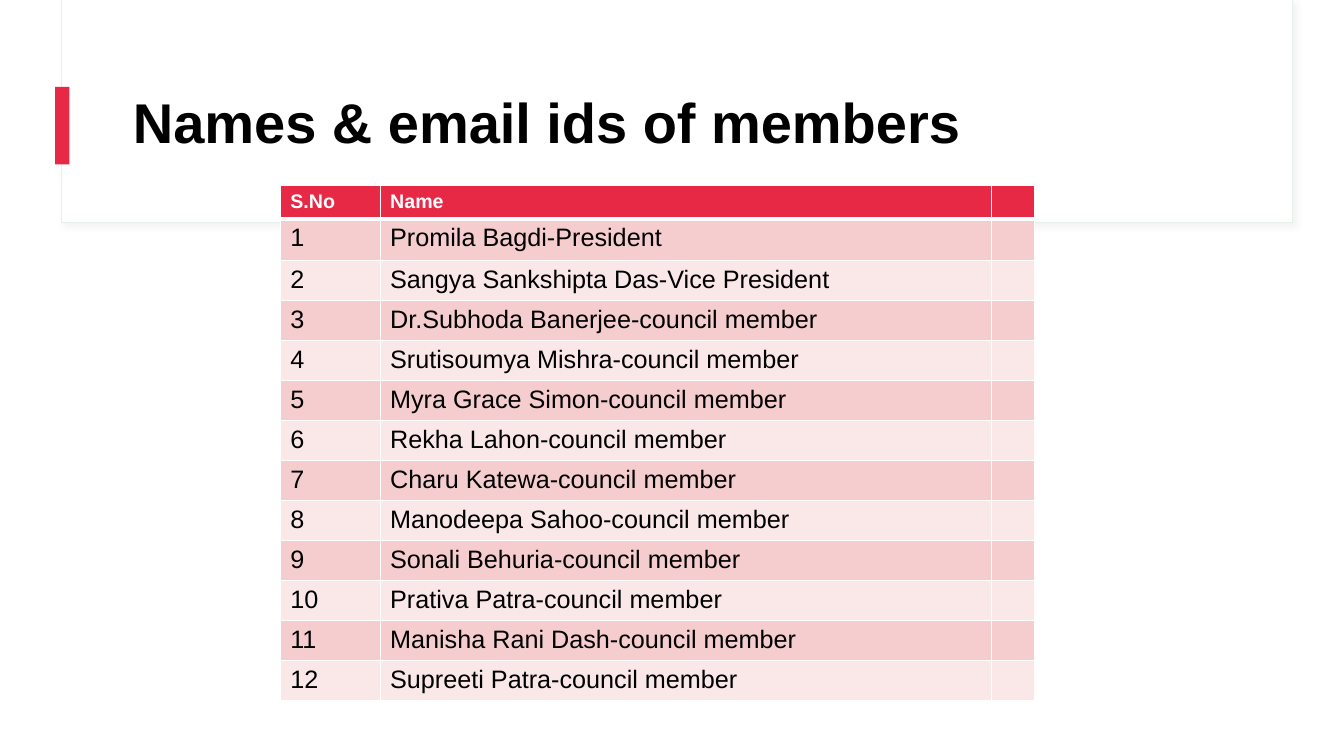
from lxml.etree import SubElement
from pptx import Presentation
from pptx.dml.color import RGBColor
from pptx.enum.shapes import MSO_SHAPE as Shape
from pptx.enum.text import MSO_ANCHOR as Anchor
from pptx.oxml.ns import qn
from pptx.util import Pt

WHITE = RGBColor(0xFF, 0xFF, 0xFF)
BLACK = RGBColor(0, 0, 0)
RED = RGBColor(0xE7, 0x29, 0x46)
PINK = RGBColor(0xF6, 0xCD, 0xCF)
PALE_PINK = RGBColor(0xFA, 0xE8, 0xE9)
PALE_GREEN = RGBColor(0xE4, 0xF0, 0xE8)
SHADOW_GREY = RGBColor(0xD9, 0xD9, 0xD9)
FONT = "Arial"

MEMBERS = [
    "Promila Bagdi-President",
    "Sangya Sankshipta Das-Vice President",
    "Dr.Subhoda Banerjee-council member",
    "Srutisoumya Mishra-council member",
    "Myra Grace Simon-council member",
    "Rekha Lahon-council member",
    "Charu Katewa-council member",
    "Manodeepa Sahoo-council member",
    "Sonali Behuria-council member",
    "Prativa Patra-council member",
    "Manisha Rani Dash-council member",
    "Supreeti Patra-council member",
]
COLUMN_WIDTHS = [71.3, 437, 30.2]
HEADER_HEIGHT, FIRST_HEIGHT, ROW_HEIGHT = 23.6, 29.5, 27.38


def add_rectangle(slide, left, top, width, height, fill, line=None):
    """Add a flat rectangle with an optional thin outline."""
    shape = slide.shapes.add_shape(Shape.RECTANGLE, Pt(left), Pt(top), Pt(width), Pt(height))
    shape.shadow.inherit = False
    shape.fill.solid()
    shape.fill.fore_color.rgb = fill
    if line is None:
        shape.line.fill.background()
    else:
        shape.line.color.rgb = line
        shape.line.width = Pt(0.75)
    return shape


def add_soft_shadow(shape):
    """Give a shape a faint shadow towards the lower right."""
    effects = shape._element.spPr.find(qn("a:effectLst"))
    shadow = SubElement(effects, qn("a:outerShdw"), blurRad=str(Pt(4)), dist=str(Pt(3)), dir="2700000")
    color = SubElement(shadow, qn("a:srgbClr"), val=str(SHADOW_GREY))
    SubElement(color, qn("a:alpha"), val="30000")


def format_font(font, size, color, bold):
    """Set the typeface, size, colour and weight of a font."""
    font.name = FONT
    font.size = Pt(size)
    font.color.rgb = color
    font.bold = bold


def place_title(slide, text):
    """Fill the title placeholder and bring it in front of the panel."""
    title = slide.shapes.title
    title.left, title.top, title.width, title.height = Pt(87.8), Pt(43.2), Pt(800.6), Pt(92.9)
    frame = title.text_frame
    frame.text = text
    frame.word_wrap = True
    frame.vertical_anchor = Anchor.MIDDLE
    paragraph = frame.paragraphs[0]
    paragraph.alignment = 1
    paragraph.line_spacing = 0.9
    format_font(paragraph.runs[0].font, 40, BLACK, True)
    slide.shapes._spTree.append(title._element)


def set_borders(cell, top, bottom):
    """Draw white borders round a cell, with the given top and bottom widths."""
    properties = cell._tc.get_or_add_tcPr()
    for side, width in (("L", 1), ("R", 1), ("T", top), ("B", bottom)):
        line = SubElement(properties, qn(f"a:ln{side}"), w=str(Pt(width)))
        SubElement(SubElement(line, qn("a:solidFill")), qn("a:srgbClr"), val=str(WHITE))


def format_cell(cell, text, row):
    """Write one table cell and style it according to its row."""
    header = row == 0
    size = 14 if header else 18
    set_borders(cell, 3 if row == 1 else 1, 3 if header else 1)
    cell.fill.solid()
    cell.fill.fore_color.rgb = RED if header else PINK if row % 2 else PALE_PINK
    cell.margin_top, cell.margin_bottom = Pt(3.6), Pt(3)
    cell.text_frame.text = text
    paragraph = cell.text_frame.paragraphs[0]
    for run in paragraph.runs:
        format_font(run.font, size, WHITE if header else BLACK, header)
    if not text:
        SubElement(paragraph._p, qn("a:endParaRPr"), sz=str(size * 100))


def add_member_table(slide):
    """Add the numbered table of members."""
    rows = [("S.No", "Name", "")]
    rows += [(str(number), name, "") for number, name in enumerate(MEMBERS, 1)]
    heights = [HEADER_HEIGHT, FIRST_HEIGHT] + [ROW_HEIGHT] * (len(rows) - 2)
    table = slide.shapes.add_table(
        len(rows), len(COLUMN_WIDTHS), Pt(200.2), Pt(132.7), Pt(sum(COLUMN_WIDTHS)), Pt(sum(heights))
    ).table
    for column, width in zip(table.columns, COLUMN_WIDTHS):
        column.width = Pt(width)
    for index, (values, height) in enumerate(zip(rows, heights)):
        table.rows[index].height = Pt(height)
        for column, text in enumerate(values):
            format_cell(table.cell(index, column), text, index)


def main():
    """Build the members slide and save it."""
    presentation = Presentation()
    presentation.slide_width, presentation.slide_height = Pt(960), Pt(540)
    slide = presentation.slides.add_slide(presentation.slide_layouts[5])
    panel = add_rectangle(slide, 44, 0, 879, 159, WHITE, PALE_GREEN)
    add_soft_shadow(panel)
    add_rectangle(slide, 44.6, 0, 878.4, 158.4, WHITE)
    add_rectangle(slide, 39.5, 62, 10.2, 55.5, RED)
    place_title(slide, "Names & email ids of members")
    add_member_table(slide)
    presentation.save("out.pptx")


if __name__ == "__main__":
    main()
